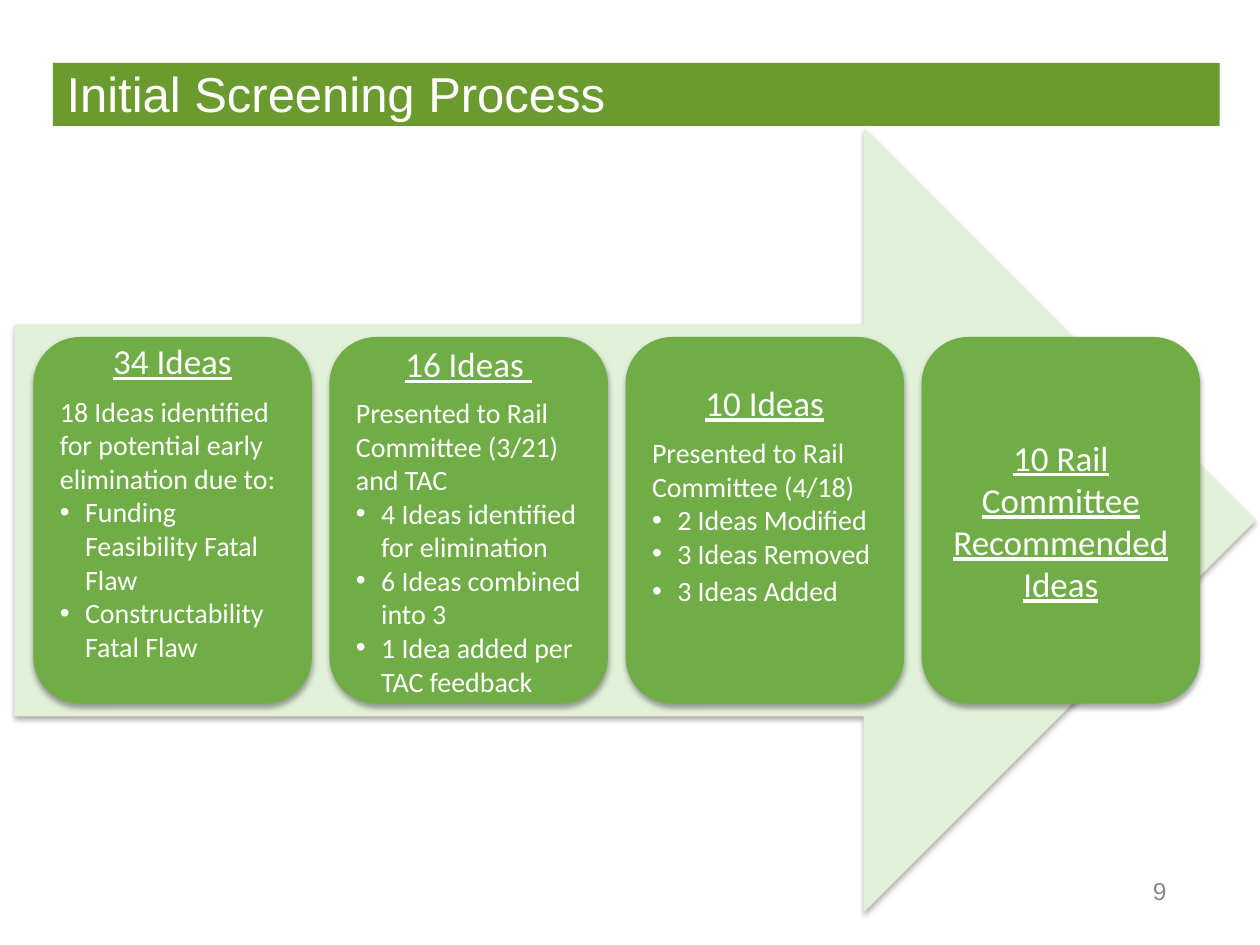
from dataclasses import dataclass
from lxml.etree import SubElement
from pptx import Presentation
from pptx.dml.color import RGBColor
from pptx.enum.shapes import MSO_SHAPE
from pptx.enum.text import MSO_ANCHOR, PP_ALIGN
from pptx.oxml.ns import qn
from pptx.shapes.autoshape import Shape
from pptx.slide import Slide
from pptx.text.text import TextFrame, _Paragraph
from pptx.util import Pt

EMU_PER_PX = 9144


@dataclass(frozen=True)
class Theme:
    bar: str = "6B9A2F"
    arrow: str = "E2F0D9"
    card: str = "70AD47"
    light: str = "FFFFFF"
    muted: str = "898989"
    shadow: str = "000000"
    title_font: str = "Arial"
    card_font: str = "Calibri"
    title_size: int = 28
    heading_size: int = 20
    body_size: int = 16
    number_size: int = 14


@dataclass(frozen=True)
class Box:
    left: int
    top: int
    width: int
    height: int

    def emu(self) -> list[int]:
        return [px * EMU_PER_PX for px in (self.left, self.top, self.width, self.height)]


@dataclass(frozen=True)
class Card:
    heading: str
    intro: tuple[str, ...] = ()
    bullets: tuple[str, ...] = ()
    intro_gap: int = 0
    last_gap: int = 0
    bottom_inset: int = 5


THEME = Theme()
FIRST_CARD = Box(27, 268, 220, 290)
CARD_PITCH = 235
BULLET_INDENT = 20
CARDS = (
    Card(
        "34 Ideas",
        ("18 Ideas identified for potential early elimination due to:",),
        ("Funding Feasibility Fatal Flaw", "Constructability Fatal Flaw"),
        intro_gap=7,
        bottom_inset=35,
    ),
    Card(
        "16 Ideas ",
        ("Presented to Rail Committee (3/21)", "and TAC"),
        (
            "4 Ideas identified for elimination",
            "6 Ideas combined into 3",
            "1 Idea added per TAC feedback",
        ),
        intro_gap=6,
    ),
    Card(
        "10 Ideas",
        ("Presented to Rail Committee (4/18)",),
        ("2 Ideas Modified", "3 Ideas Removed", "3 Ideas Added"),
        intro_gap=7,
        last_gap=2,
        bottom_inset=46,
    ),
    Card("10 Rail Committee Recommended Ideas"),
)


def add_block(page: Slide, kind: MSO_SHAPE, box: Box, color: str) -> Shape:
    block = page.shapes.add_shape(kind, *box.emu())
    block.shadow.inherit = False
    block.fill.solid()
    block.fill.fore_color.rgb = RGBColor.from_string(color)
    block.line.fill.background()
    return block


def add_raised_block(page: Slide, kind: MSO_SHAPE, box: Box, color: str) -> Shape:
    block = add_block(page, kind, box, color)
    block.line.color.rgb = RGBColor.from_string(color)
    block.line.width = Pt(0.75)
    effects = block.element.spPr.find(qn("a:effectLst"))
    shadow = SubElement(
        effects,
        qn("a:outerShdw"),
        blurRad=str(Pt(3.1)),
        dist=str(Pt(1.8)),
        dir="5400000",
        rotWithShape="0",
    )
    shade = SubElement(shadow, qn("a:srgbClr"), val=THEME.shadow)
    SubElement(shade, qn("a:alpha"), val="35000")
    return block


def add_bullet(para: _Paragraph) -> None:
    properties = para._p.get_or_add_pPr()
    indent = BULLET_INDENT * EMU_PER_PX
    for name, value in {"marL": indent, "indent": -indent}.items():
        properties.set(name, str(value))
    SubElement(properties, qn("a:buFont"), typeface=THEME.title_font)
    SubElement(properties, qn("a:buChar"), char="•")


def write(para: _Paragraph, text: str, font: str, size: int, color: str,
          align: PP_ALIGN = PP_ALIGN.LEFT, underline: bool = False) -> None:
    para.alignment = align
    span = para.add_run()
    span.text = text
    for name, value in {"name": font, "size": Pt(size), "underline": underline}.items():
        setattr(span.font, name, value)
    span.font.color.rgb = RGBColor.from_string(color)


def prepare_frame(frame: TextFrame, **insets: int) -> None:
    margins = {f"margin_{side}": px * EMU_PER_PX for side, px in insets.items()}
    formats = {"word_wrap": True, "vertical_anchor": MSO_ANCHOR.MIDDLE, **margins}
    for name, value in formats.items():
        setattr(frame, name, value)


def add_label(page: Slide, box: Box, text: str, size: int, color: str,
              align: PP_ALIGN, side_inset: int) -> None:
    frame = page.shapes.add_textbox(*box.emu()).text_frame
    prepare_frame(frame, left=side_inset, right=side_inset)
    write(frame.paragraphs[0], text, THEME.title_font, size, color, align)


def add_card(page: Slide, box: Box, card: Card) -> None:
    frame = add_raised_block(page, MSO_SHAPE.ROUNDED_RECTANGLE, box, THEME.card).text_frame
    prepare_frame(frame, bottom=card.bottom_inset)
    write(frame.paragraphs[0], card.heading, THEME.card_font, THEME.heading_size,
          THEME.light, PP_ALIGN.CENTER, True)
    for position, text in enumerate(card.intro + card.bullets):
        para = frame.add_paragraph()
        if position == 0:
            para.space_before = Pt(card.intro_gap)
        if card.last_gap and text == card.bullets[-1]:
            para.space_before = Pt(card.last_gap)
        if position >= len(card.intro):
            add_bullet(para)
        write(para, text, THEME.card_font, THEME.body_size, THEME.light)


def main() -> None:
    deck = Presentation()
    deck.slide_width = 1000 * EMU_PER_PX
    deck.slide_height = 750 * EMU_PER_PX
    page = deck.slides.add_slide(deck.slide_layouts[6])

    add_label(page, Box(871, 692, 99, 30), "9", THEME.number_size, THEME.muted,
              PP_ALIGN.CENTER, 0)
    add_block(page, MSO_SHAPE.RECTANGLE, Box(42, 50, 926, 50), THEME.bar)
    add_label(page, Box(43, 51, 790, 45), "Initial Screening Process", THEME.title_size,
              THEME.light, PP_ALIGN.LEFT, 10)
    add_raised_block(page, MSO_SHAPE.RIGHT_ARROW, Box(12, 103, 984, 620), THEME.arrow)
    for index, card in enumerate(CARDS):
        left = FIRST_CARD.left + index * CARD_PITCH
        add_card(page, Box(left, FIRST_CARD.top, FIRST_CARD.width, FIRST_CARD.height), card)

    deck.save("out.pptx")


if __name__ == "__main__":
    main()
